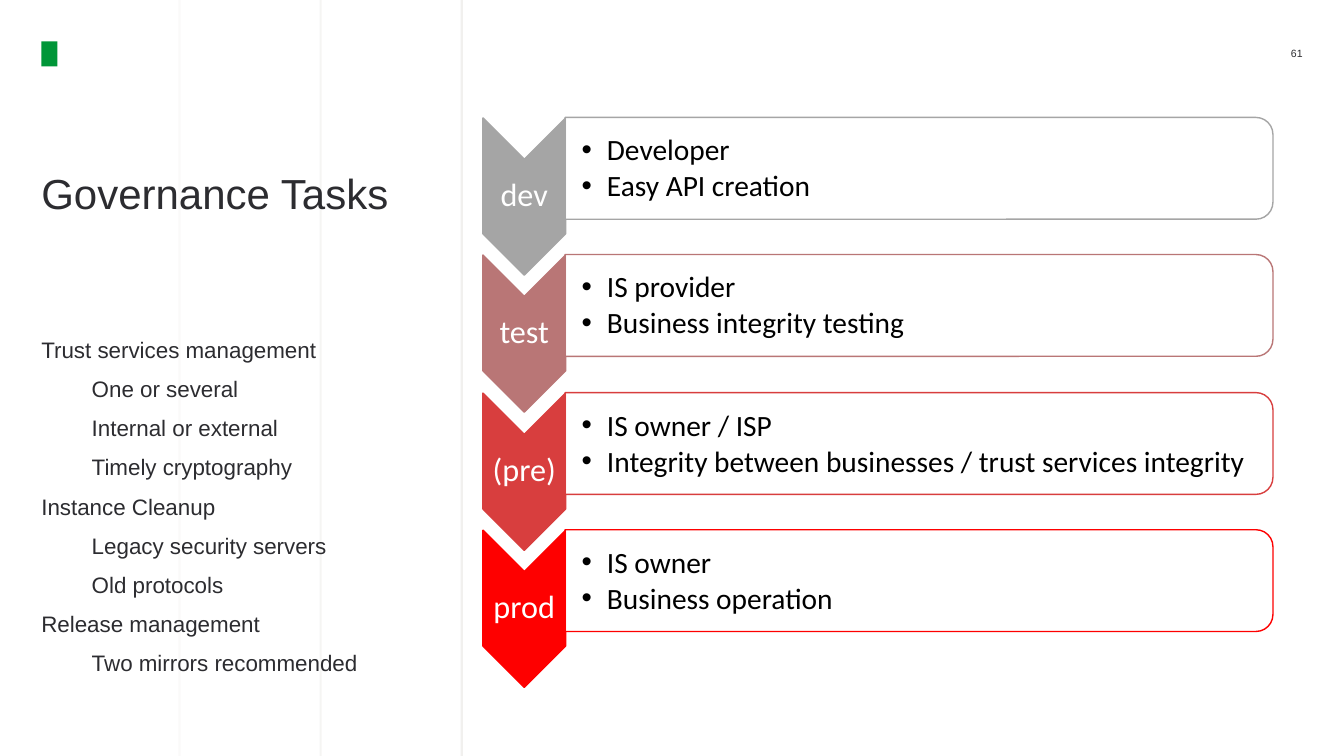
from lxml import etree
from pptx import Presentation
from pptx.dml.color import RGBColor
from pptx.enum.shapes import MSO_CONNECTOR, MSO_SHAPE
from pptx.enum.text import MSO_ANCHOR, PP_ALIGN
from pptx.oxml.ns import qn
from pptx.util import Emu, Pt

LINE = MSO_CONNECTOR.STRAIGHT
RECT, CHEVRON = MSO_SHAPE.RECTANGLE, MSO_SHAPE.CHEVRON
ROUND = MSO_SHAPE.ROUND_2_SAME_RECTANGLE
TOP, MIDDLE = MSO_ANCHOR.TOP, MSO_ANCHOR.MIDDLE
LEFT, CENTER, RIGHT = PP_ALIGN.LEFT, PP_ALIGN.CENTER, PP_ALIGN.RIGHT

SCALE = 9144  # EMU in one px, 100 px to the inch
COLORS = {
    "ink": "2C2C30", "black": "000000", "white": "FFFFFF",
    "rule": "E8E7E3", "mark": "009638",
    "dev": "A5A5A5", "test": "B97676", "pre": "D83E3E", "prod": "FE0000",
}
STAGES = [
    ("dev", "dev", ["Developer", "Easy API creation"]),
    ("test", "test", ["IS provider", "Business integrity testing"]),
    ("(pre)", "pre", ["IS owner / ISP",
                      "Integrity between businesses / trust services integrity"]),
    ("prod", "prod", ["IS owner", "Business operation"]),
]
TASKS = [
    ("Trust services management",
     ["One or several", "Internal or external", "Timely cryptography"]),
    ("Instance Cleanup", ["Legacy security servers", "Old protocols"]),
    ("Release management", ["Two mirrors recommended"]),
]


def px(*sizes):
    return [Emu(size * SCALE) for size in sizes]


def rgb(name):
    return RGBColor.from_string(COLORS[name])


def fade(fill, percent):
    """Set the opacity of the solid colour found below fill."""
    color = fill.find(".//" + qn("a:srgbClr"))
    etree.SubElement(color, qn("a:alpha"), val=str(percent * 1000))


def add_rule(slide, x, percent):
    rule = slide.shapes.add_connector(LINE, *px(x, 0, x, 750))
    rule.line.color.rgb = rgb("rule")
    rule.line.width = Pt(1.5)
    props = rule.line._get_or_add_ln()
    fade(props, percent)
    etree.SubElement(rule._element.spPr, qn("a:effectLst"))


def add_block(slide, kind, box, fill, line, turn=0, adjust=()):
    block = slide.shapes.add_shape(kind, *px(*box))
    block.shadow.inherit = False
    block.rotation = turn
    block.fill.solid()
    block.fill.fore_color.rgb = rgb(fill)
    block.line.color.rgb = rgb(line)
    block.line.width = Pt(1)
    for i, value in enumerate(adjust):
        block.adjustments[i] = value
    return block


def add_text(slide, box, lines, size, color, font="Arial", align=LEFT,
             anchor=TOP, inset=(0, 0, 0, 0), pitch=1.0, before=0):
    frame = slide.shapes.add_textbox(*px(*box)).text_frame
    frame.word_wrap = True
    frame.vertical_anchor = anchor
    (frame.margin_left, frame.margin_top,
     frame.margin_right, frame.margin_bottom) = px(*inset)
    frame.text = "\n".join(lines)
    for para in frame.paragraphs:
        para.alignment = align
        para.line_spacing = pitch
        para.space_before = Pt(before)
        for run in para.runs:
            run.font.size = Pt(size)
            run.font.name = font
            run.font.color.rgb = rgb(color)
    return frame


def add_bullets(frame):
    indent = 25 * SCALE
    for para in frame.paragraphs:
        props = para._p.get_or_add_pPr()
        props.set("marL", str(indent))
        props.set("indent", str(-indent))
        etree.SubElement(props, qn("a:buFont"), typeface="Arial")
        etree.SubElement(props, qn("a:buChar"), char="•")


def add_stage(slide, drop, label, color, roles):
    """Draw one step of the flow, drop px below the first one."""
    add_block(slide, CHEVRON, (442, 154 + drop, 156, 82), color, color, 90, [0.5])
    add_text(slide, (479, 171 + drop, 82, 47), [label], 23, "white", "Calibri",
             CENTER, MIDDLE, (2, 2, 2, 2), 0.9)
    panel = add_block(slide, ROUND, (861, drop - 184, 101, 702), "white", color,
                      90, [0.167, 0])
    fade(panel._element.spPr.find(qn("a:solidFill")), 88)
    frame = add_text(slide, (561, 122 + drop, 698, 92), roles, 21, "black",
                     "Calibri", LEFT, MIDDLE, (16, 1, 1, 1), 0.9, 3.1)
    frame.paragraphs[0].space_before = Pt(0)
    add_bullets(frame)


def main():
    deck = Presentation()
    deck.slide_width, deck.slide_height = px(1333, 750)
    slide = deck.slides.add_slide(deck.slide_layouts[6])

    add_block(slide, RECT, (41, 41, 16, 25), "mark", "mark").line.fill.background()
    for i in range(3):
        add_rule(slide, 178 + 140 * i, 20 * (i + 1))
    add_text(slide, (41, 166, 389, 144), ["Governance Tasks"], 30, "ink")
    add_text(slide, (1253, 41, 39, 24), ["61"], 7.5, "ink", align=RIGHT,
             anchor=MIDDLE)
    for i, stage in enumerate(STAGES):
        add_stage(slide, i * 273 // 2, *stage)

    lines = []
    for head, items in TASKS:
        lines += [head] + ["\t" + item for item in items]
    add_text(slide, (41, 328, 389, 354), lines, 16, "ink", pitch=1.2, before=5)
    deck.save("out.pptx")


if __name__ == "__main__":
    main()
